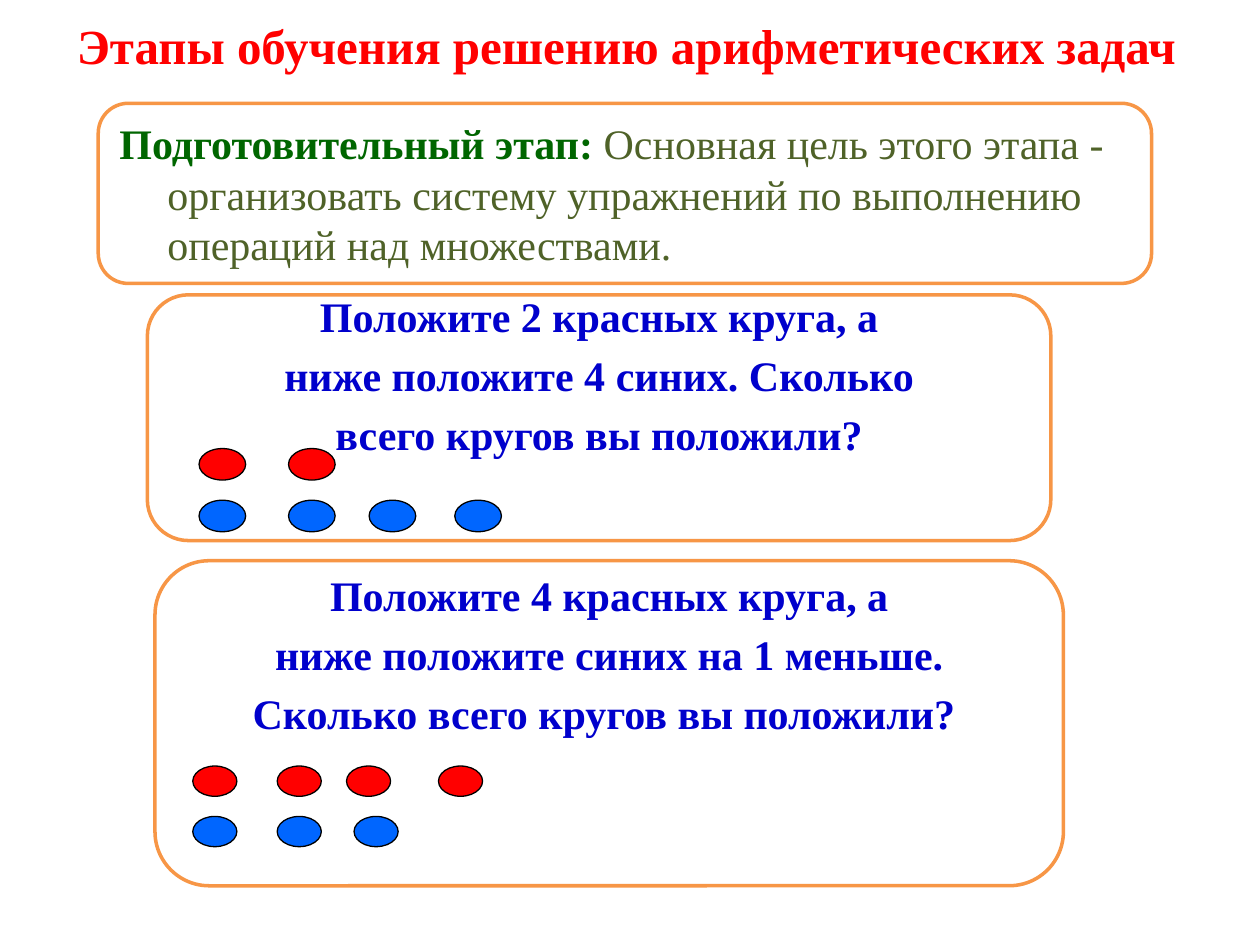
from pptx import Presentation
from pptx.dml.color import RGBColor
from pptx.enum.shapes import MSO_SHAPE
from pptx.enum.text import MSO_ANCHOR, PP_ALIGN
from pptx.util import Inches, Pt

RED, BLUE = "FF0000", "0066FF"


def color(code):
    return RGBColor.from_string(code)


def style(run, size, code, bold=True):
    run.font.name = "Times New Roman"
    run.font.size = Pt(size)
    run.font.bold = bold
    run.font.color.rgb = color(code)


def shape(parent, kind, box, fill, line, width):
    item = parent.add_shape(kind, *map(Inches, box))
    item.shadow.inherit = False
    item.fill.solid()
    item.fill.fore_color.rgb = color(fill)
    item.line.color.rgb = color(line)
    item.line.width = Pt(width)
    return item


def frame(slide, box):
    item = shape(slide.shapes, MSO_SHAPE.ROUNDED_RECTANGLE, box, "FFFFFF", "F79646", 2)
    text = item.text_frame
    text.word_wrap = True
    text.vertical_anchor = MSO_ANCHOR.MIDDLE
    return text


def heading(slide, box, words):
    title = slide.shapes.title
    title.left, title.top, title.width, title.height = map(Inches, box)
    text = title.text_frame
    text.text = words
    text.word_wrap = True
    text.vertical_anchor = MSO_ANCHOR.MIDDLE
    text.margin_left = text.margin_right = Inches(0.05)
    para = text.paragraphs[0]
    para.alignment = PP_ALIGN.CENTER
    style(para.runs[0], 28, RED)


def goal(slide, box, label, words):
    para = frame(slide, box).paragraphs[0]
    para.alignment = PP_ALIGN.LEFT
    para.line_spacing = Pt(28.9)
    props = para._p.get_or_add_pPr()
    props.set("marL", str(Inches(0.38)))
    props.set("indent", str(Inches(-0.38)))
    for part, code, bold in ((label, "006600", True), (words, "4F6228", False)):
        run = para.add_run()
        run.text = part
        style(run, 24, code, bold)


def task(slide, box, lines, foot, size, rows):
    text = frame(slide, box)
    text.margin_top = 0
    text.margin_bottom = Inches(foot)
    text.text = "\n".join(lines)
    for index, para in enumerate(text.paragraphs):
        para.alignment = PP_ALIGN.CENTER
        para.line_spacing = Pt(28.9)
        if index:
            para.space_before = Pt(4.8)
        style(para.runs[0], 24, "0000CC")

    left, top = box[:2]
    group = slide.shapes.add_group_shape()
    for code, down, across in rows:
        for step in across:
            dot = (left + step, top + down, *size)
            shape(group.shapes, MSO_SHAPE.OVAL, dot, code, "000000", 0.75)


def main():
    deck = Presentation()
    deck.slide_width, deck.slide_height = Inches(10), Inches(7.5)
    slide = deck.slides.add_slide(deck.slide_layouts[5])
    heading(slide, (0.47, 0, 9, 0.72), "Этапы обучения решению арифметических задач")
    goal(
        slide, (0.78, 0.82, 8.36, 1.43), "Подготовительный этап: ",
        "Основная цель этого этапа - организовать систему упражнений "
        "по выполнению операций над множествами.",
    )
    task(
        slide, (1.17, 2.34, 7.17, 1.95),
        ("Положите 2 красных круга, а",
         "ниже положите 4 синих. Сколько",
         "всего кругов вы положили?"),
        0.69, (0.37, 0.25),
        ((RED, 1.22, (0.41, 1.12)),
         (BLUE, 1.63, (0.41, 1.12, 1.76, 2.44))),
    )
    task(
        slide, (1.23, 4.45, 7.21, 2.58),
        ("Положите 4 красных круга, а",
         "ниже положите синих на 1 меньше.",
         "Сколько всего кругов вы положили? "),
        1.1, (0.35, 0.24),
        ((RED, 1.63, (0.3, 0.97, 1.52, 2.25)),
         (BLUE, 2.03, (0.3, 0.97, 1.58))),
    )
    deck.save("out.pptx")


if __name__ == "__main__":
    main()
